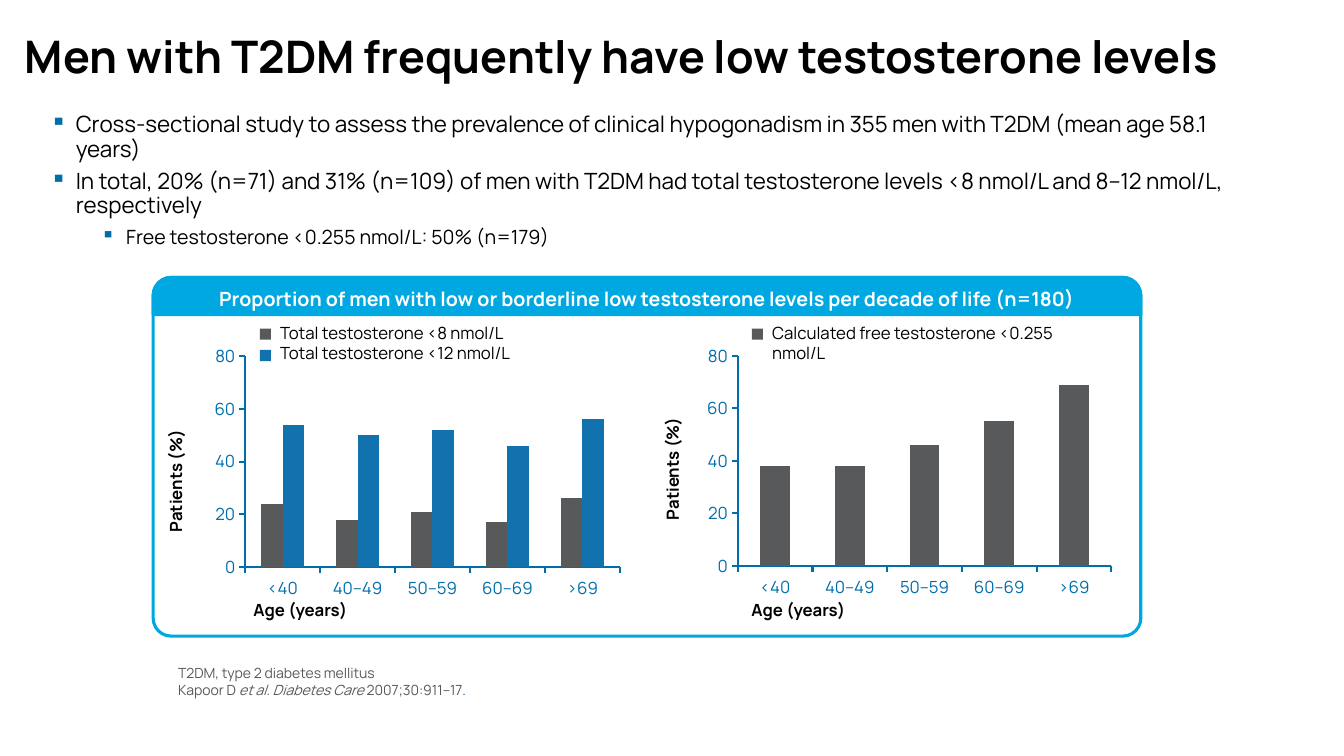
from dataclasses import dataclass

from lxml import etree
from pptx import Presentation
from pptx.chart.data import CategoryChartData
from pptx.dml.color import RGBColor
from pptx.enum.chart import XL_CHART_TYPE, XL_TICK_MARK
from pptx.enum.shapes import MSO_SHAPE
from pptx.enum.text import MSO_ANCHOR, PP_ALIGN
from pptx.oxml import parse_xml
from pptx.oxml.ns import nsdecls, qn
from pptx.util import Cm, Pt

COLUMNS = XL_CHART_TYPE.COLUMN_CLUSTERED
TICK_OUTSIDE, TICK_NONE = XL_TICK_MARK.OUTSIDE, XL_TICK_MARK.NONE
RECTANGLE = MSO_SHAPE.RECTANGLE
ROUNDED = MSO_SHAPE.ROUNDED_RECTANGLE
ROUNDED_TOP = MSO_SHAPE.ROUND_2_SAME_RECTANGLE
TOP, MIDDLE, BOTTOM = MSO_ANCHOR.TOP, MSO_ANCHOR.MIDDLE, MSO_ANCHOR.BOTTOM
LEFT, CENTER = PP_ALIGN.LEFT, PP_ALIGN.CENTER


@dataclass(frozen=True)
class Theme:
    font: str = "Manrope"
    black: str = "000000"
    white: str = "FFFFFF"
    gray: str = "58595B"
    blue: str = "1272AE"
    axis: str = "006EAB"
    frame: str = "00A8E1"
    period: str = "005294"
    title: int = 32
    body: int = 16
    heading: int = 14
    label: int = 12
    footnote: int = 10


class SlideBuilder:
    def __init__(self, slide, theme):
        self.slide = slide
        self.theme = theme

    def add_run(self, paragraph, text, size, color, bold=False, italic=False):
        run = paragraph.add_run()
        run.text = text
        run.font.name = self.theme.font
        run.font.size = Pt(size)
        run.font.bold = bold
        run.font.italic = italic
        run.font.color.rgb = RGBColor.from_string(color)

    def text_box(self, box, anchor=TOP, wrap=True):
        frame = self.slide.shapes.add_textbox(*map(Cm, box)).text_frame
        frame.word_wrap = wrap
        frame.vertical_anchor = anchor
        return frame

    def text_lines(self, box, lines, size, color, bold=False, anchor=TOP,
                   wrap=True, spacing=None):
        frame = self.text_box(box, anchor, wrap)
        for index, line in enumerate(lines):
            paragraph = frame.add_paragraph() if index else frame.paragraphs[0]
            paragraph.line_spacing = spacing
            self.add_run(paragraph, line, size, color, bold)
        return frame

    def bullets(self, box, items):
        """Items are (text, left indent in cm, type size)."""
        frame = self.text_box(box)
        for index, (text, indent, size) in enumerate(items):
            paragraph = frame.add_paragraph() if index else frame.paragraphs[0]
            paragraph.line_spacing = 0.9
            paragraph.space_before = Pt(6 if index else 0)
            properties = paragraph._p.get_or_add_pPr()
            properties.set("marL", str(Cm(indent)))
            properties.set("indent", str(-Cm(0.64)))
            color = etree.SubElement(properties, qn("a:buClr"))
            etree.SubElement(color, qn("a:srgbClr"), val=self.theme.axis)
            etree.SubElement(properties, qn("a:buChar"), char="▪")
            self.add_run(paragraph, text, size, self.theme.black)

    def axis_title(self, text, center_x, center_y, rotation=0):
        width, height = 4, 0.76
        shape = self.slide.shapes.add_textbox(
            Cm(center_x - width / 2), Cm(center_y - height / 2), Cm(width), Cm(height))
        shape.rotation = rotation
        frame = shape.text_frame
        frame.word_wrap = True
        frame.vertical_anchor = MIDDLE
        frame.paragraphs[0].alignment = CENTER
        self.add_run(frame.paragraphs[0], text, self.theme.label, self.theme.black, True)

    def shape(self, kind, box, fill=None, line=None, adjustment=None):
        shape = self.slide.shapes.add_shape(kind, *map(Cm, box))
        shape.shadow.inherit = False
        if adjustment is not None:
            shape.adjustments[0] = adjustment
        if fill:
            shape.fill.solid()
            shape.fill.fore_color.rgb = RGBColor.from_string(fill)
        else:
            shape.fill.background()
        if line:
            shape.line.color.rgb = RGBColor.from_string(line)
            shape.line.width = Pt(2.25)
        else:
            shape.line.fill.background()
        return shape

    def legend(self, left, top, entries):
        """Entries are (label, color), one below the other."""
        for index, (_, color) in enumerate(entries):
            self.shape(RECTANGLE, (left, top + 0.28 + 0.54 * index, 0.28, 0.28), color)
        self.text_lines((left + 0.26, top, 9, 0.25 + 0.51 * len(entries)),
                        [label for label, _ in entries], self.theme.label,
                        self.theme.black, wrap=False)

    def column_chart(self, box, plot, categories, series):
        """Series are (name, values, color); plot is x, y, w, h as fractions."""
        data = CategoryChartData()
        data.categories = categories
        for name, values, _ in series:
            data.add_series(name, values)
        chart = self.slide.shapes.add_chart(COLUMNS, *map(Cm, box), data).chart
        chart.has_legend = False
        chart.has_title = False
        chart.font.name = self.theme.font
        chart.font.size = Pt(self.theme.label)
        chart.font.color.rgb = RGBColor.from_string(self.theme.axis)
        columns = chart.plots[0]
        columns.vary_by_categories = False
        columns.gap_width = 150
        columns.overlap = 0
        for drawn, (_, _, color) in zip(columns.series, series):
            drawn.format.fill.solid()
            drawn.format.fill.fore_color.rgb = RGBColor.from_string(color)
        for axis in (chart.category_axis, chart.value_axis):
            axis.has_major_gridlines = False
            axis.major_tick_mark = TICK_OUTSIDE
            axis.minor_tick_mark = TICK_NONE
            axis.format.line.color.rgb = RGBColor.from_string(self.theme.axis)
            axis.format.line.width = Pt(1.5)
        chart.value_axis.minimum_scale = 0
        chart.value_axis.maximum_scale = 80
        chart.value_axis.major_unit = 20
        self.place_plot(chart, plot)

    def place_plot(self, chart, plot):
        sizes = "".join(f'<c:{tag} val="{value}"/>' for tag, value in zip("xywh", plot))
        layout = parse_xml(
            f'<c:layout {nsdecls("c")}><c:manualLayout><c:layoutTarget val="inner"/>'
            f'<c:xMode val="edge"/><c:yMode val="edge"/>{sizes}</c:manualLayout></c:layout>')
        area = chart._chartSpace.find(".//" + qn("c:plotArea"))
        for previous in area.findall(qn("c:layout")):
            area.remove(previous)
        area.insert(0, layout)


def main():
    theme = Theme()
    presentation = Presentation()
    presentation.slide_width = Cm(33.87)
    presentation.slide_height = Cm(19.05)
    slide = presentation.slides.add_slide(presentation.slide_layouts[6])
    builder = SlideBuilder(slide, theme)

    builder.text_lines((0.38, 0.33, 32.21, 2.31),
                       ["Men with T2DM frequently have low testosterone levels"],
                       theme.title, theme.black, bold=True, anchor=MIDDLE, spacing=0.9)
    builder.bullets((1.02, 2.74, 30.94, 4.7), [
        ("Cross-sectional study to assess the prevalence of clinical hypogonadism "
         "in 355 men with T2DM (mean age 58.1 years)", 0.64, theme.body),
        ("In total, 20% (n=71) and 31% (n=109) of men with T2DM had total testosterone "
         "levels <8 nmol/L and 8–12 nmol/L, respectively", 0.64, theme.body),
        ("Free testosterone <0.255 nmol/L: 50% (n=179)", 1.91, theme.heading),
    ])
    footnote = builder.text_lines((4.24, 16.59, 25.4, 1.12),
                                  ["T2DM, type 2 diabetes mellitus", "Kapoor D "],
                                  theme.footnote, theme.gray, anchor=BOTTOM)
    citation = footnote.paragraphs[1]
    builder.add_run(citation, "et al. Diabetes Care ", theme.footnote, theme.gray, italic=True)
    builder.add_run(citation, "2007;30:911–17", theme.footnote, theme.gray)
    builder.add_run(citation, ".", theme.footnote, theme.period)

    ages = ["<40", "40–49", "50–59", "60–69", ">69"]
    builder.column_chart((17.4, 7.67, 11.05, 8.26), (0.108, 0.157, 0.852, 0.641), ages, [
        ("Free testosterone <0.255 nmol/L", (38, 38, 46, 55, 69), theme.gray)])
    builder.column_chart((4.93, 8.53, 11.15, 7.7), (0.112, 0.058, 0.847, 0.69), ages, [
        ("Total testosterone <8 nmol/L", (24, 18, 21, 17, 26), theme.gray),
        ("Total testosterone <12 nmol/L", (54, 50, 52, 46, 56), theme.blue)])
    for age_x, patients_x, patients_y in ((7.57, 4.42, 12.12), (20.12, 16.94, 11.81)):
        builder.axis_title("Age (years)", age_x, 15.37)
        builder.axis_title("Patients (%)", patients_x, patients_y, rotation=270)
    builder.legend(6.55, 8, [("Total testosterone <8 nmol/L", theme.gray),
                             ("Total testosterone <12 nmol/L", theme.blue)])
    builder.legend(18.95, 8, [("Calculated free testosterone <0.255 nmol/L", theme.gray)])

    builder.shape(ROUNDED, (3.86, 6.99, 24.89, 9.04), line=theme.frame, adjustment=0.05)
    header = builder.shape(ROUNDED_TOP, (3.86, 6.99, 24.89, 0.94), theme.frame,
                           theme.frame, 0.5).text_frame
    header.vertical_anchor = MIDDLE
    header.word_wrap = True
    header.paragraphs[0].alignment = CENTER
    builder.add_run(header.paragraphs[0],
                    "Proportion of men with low or borderline low testosterone levels "
                    "per decade of life (n=180)", theme.heading, theme.white, bold=True)
    presentation.save("out.pptx")


if __name__ == "__main__":
    main()
